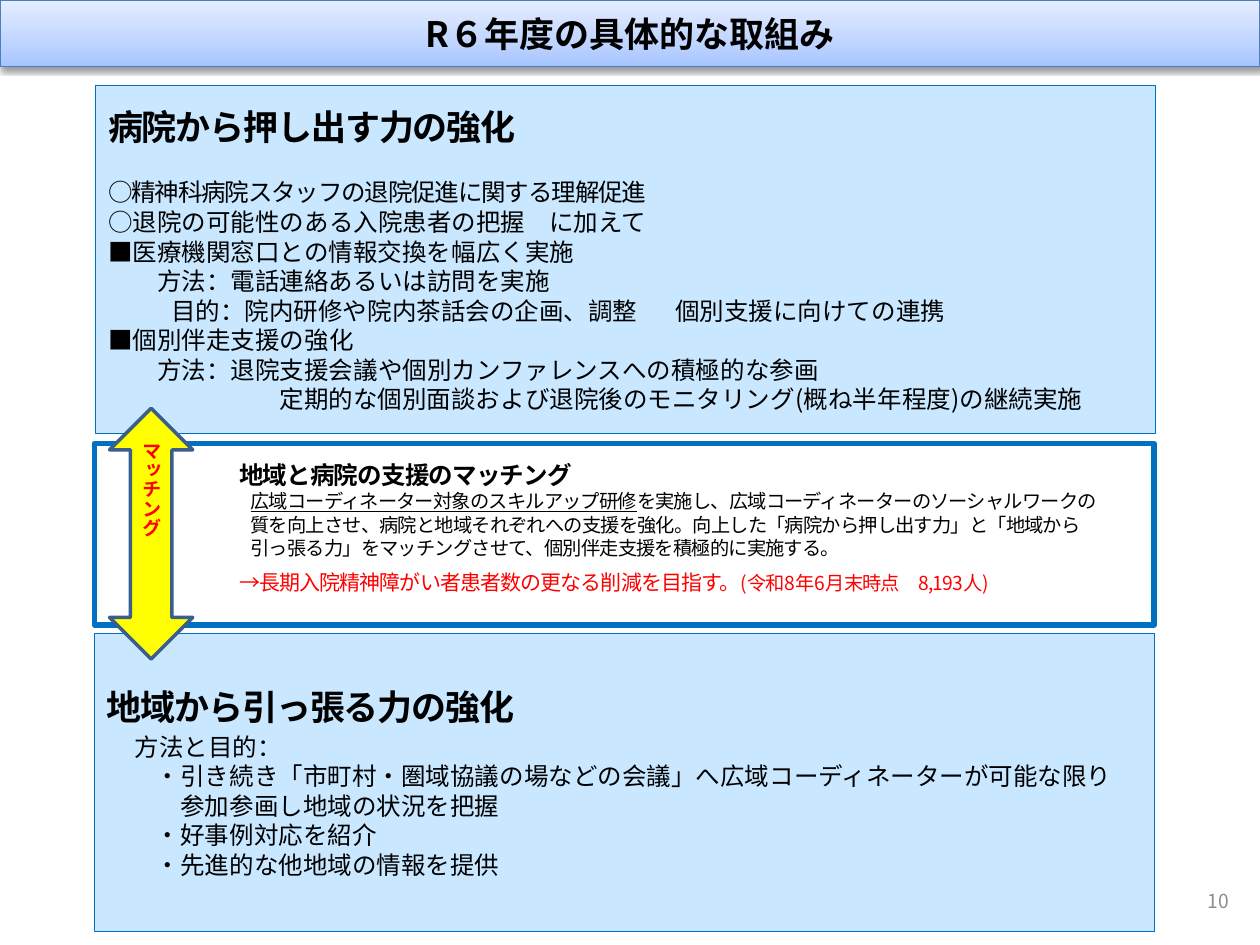
from dataclasses import dataclass

from lxml.etree import SubElement
from pptx import Presentation
from pptx.dml.color import RGBColor
from pptx.enum.shapes import MSO_SHAPE
from pptx.enum.text import MSO_ANCHOR, PP_ALIGN
from pptx.oxml import parse_xml
from pptx.oxml.ns import nsdecls, qn
from pptx.util import Inches, Pt


@dataclass(frozen=True)
class Theme:
    font: str = "Noto Sans CJK JP"
    black: str = "000000"
    red: str = "FF0000"
    grey: str = "8C8C8C"
    blue: str = "0070C0"
    panel: str = "C9E8FF"
    yellow: str = "FFFF00"
    arrow_line: str = "3A5F8C"
    banner_line: str = "4B7EBC"
    banner_stops: tuple = ((0, "A4C4FF"), (35, "BFD4FF"), (100, "E6EEFF"))
    heading: int = 20
    body: int = 14
    note: int = 12
    small: int = 11


THEME = Theme()
EM = THEME.body / 72  # one body character, in inches
LINE_HEIGHT = 1.21


@dataclass(frozen=True)
class Box:
    left: float
    top: float
    width: float
    height: float

    def inches(self):
        return [Inches(v) for v in (self.left, self.top, self.width, self.height)]


def add_box(slide, box, fill=None, line=None, width=0.5, preset=MSO_SHAPE.RECTANGLE):
    shape = slide.shapes.add_shape(preset, *box.inches())
    shape.shadow.inherit = False
    if fill:
        shape.fill.solid()
        shape.fill.fore_color.rgb = RGBColor.from_string(fill)
    else:
        shape.fill.background()
    shape.line.color.rgb = RGBColor.from_string(line)
    shape.line.width = Pt(width)
    return shape


def prepare_text(shape, anchor=MSO_ANCHOR.MIDDLE):
    text_frame = shape.text_frame
    text_frame.word_wrap = True
    text_frame.vertical_anchor = anchor
    return text_frame


def format_run(run, size, color=THEME.black, bold=False, underline=False, spacing=0):
    run.font.name = THEME.font
    run.font.size = Pt(size)
    run.font.bold = bold
    run.font.underline = underline
    run.font.color.rgb = RGBColor.from_string(color)
    properties = run._r.get_or_add_rPr()
    if spacing:
        properties.set("spc", str(round(spacing * 100)))
    SubElement(properties, qn("a:ea")).set("typeface", THEME.font)


def add_line(text_frame, text, size=THEME.body, indent=0, hanging=0, tabs=(),
             before=0, align=PP_ALIGN.LEFT, **style):
    """Write one paragraph; indents and tab stops are in inches."""
    paragraph = text_frame.paragraphs[0]
    if paragraph.runs:
        paragraph = text_frame.add_paragraph()
    paragraph.text = text
    paragraph.alignment = align
    paragraph.line_spacing = Pt(round(size * LINE_HEIGHT, 1))
    paragraph.space_before = Pt(before)
    properties = paragraph._p.get_or_add_pPr()
    properties.set("marL", str(Inches(indent)))
    properties.set("indent", str(Inches(-hanging)))
    if tabs:
        stops = SubElement(properties, qn("a:tabLst"))
        for position in tabs:
            stop = SubElement(stops, qn("a:tab"))
            stop.set("pos", str(Inches(position)))
            stop.set("algn", "l")
    for run in paragraph.runs:
        format_run(run, size, **style)
    return paragraph


def add_banner(slide, box):
    shape = add_box(slide, box, THEME.panel, THEME.banner_line, 0.75)
    # Three-stop gradient and soft shadow
    stops = "".join(f'<a:gs pos="{position * 1000}"><a:srgbClr val="{color}"/></a:gs>'
                    for position, color in THEME.banner_stops)
    properties = shape._element.spPr
    properties.replace(properties.find(qn("a:solidFill")), parse_xml(
        f'<a:gradFill {nsdecls("a")} rotWithShape="1"><a:gsLst>{stops}</a:gsLst>'
        '<a:lin ang="16200000" scaled="0"/></a:gradFill>'))
    properties.replace(properties.find(qn("a:effectLst")), parse_xml(
        f'<a:effectLst {nsdecls("a")}><a:outerShdw blurRad="{Pt(3.1)}" '
        f'dist="{Pt(1.6)}" dir="5400000" rotWithShape="0"><a:srgbClr val="000000">'
        '<a:alpha val="38000"/></a:srgbClr></a:outerShdw></a:effectLst>'))
    add_line(prepare_text(shape), "R６年度の具体的な取組み", THEME.heading,
             align=PP_ALIGN.CENTER, bold=True)


def add_panel(slide, box, heading, lines):
    text_frame = prepare_text(add_box(slide, box, THEME.panel, THEME.blue))
    add_line(text_frame, heading, THEME.heading, bold=True, spacing=-0.7)
    for text, options in lines:
        add_line(text_frame, text, **options)


def add_matching(slide, box):
    # Text beside the arrow
    text_box = Box(box.left + 1.05, box.top + 0.08, 7.09, 1.28)
    text_frame = prepare_text(slide.shapes.add_textbox(*text_box.inches()), MSO_ANCHOR.TOP)
    add_line(text_frame, "地域と病院の支援のマッチング", bold=True, spacing=-0.5)
    paragraph = add_line(text_frame, "広域コーディネーター対象のスキルアップ研修", THEME.small,
                         indent=0.09, underline=True, spacing=-0.5)
    run = paragraph.add_run()
    run.text = ("を実施し、広域コーディネーターのソーシャルワークの質を向上させ、"
                "病院と地域それぞれへの支援を強化。向上した「病院から押し出す力」と"
                "「地域から引っ張る力」をマッチングさせて、個別伴走支援を積極的に実施する。")
    format_run(run, THEME.small, spacing=-0.5)
    paragraph = add_line(text_frame, "→長期入院精神障がい者患者数の更なる削減を目指す。",
                         THEME.note, before=6, color=THEME.red, spacing=-0.5)
    run = paragraph.add_run()
    run.text = "(令和8年6月末時点　8,193人)"
    format_run(run, THEME.small, THEME.red, spacing=-0.5)

    # Frame
    add_box(slide, box, line=THEME.blue, width=3)

    # Arrow linking the two panels
    arrow = add_box(slide, Box(box.left + 0.12, box.top - 0.28, 0.66, 1.99),
                    THEME.yellow, THEME.arrow_line, 2, MSO_SHAPE.UP_DOWN_ARROW)
    text_frame = prepare_text(arrow)
    text_frame._txBody.bodyPr.set("vert", "eaVert")
    add_line(text_frame, "マッチング", THEME.small, color=THEME.red, bold=True)


def add_page_number(slide, box):
    text_frame = prepare_text(slide.shapes.add_textbox(*box.inches()))
    add_line(text_frame, "10", THEME.small, align=PP_ALIGN.RIGHT, color=THEME.grey)


def main():
    presentation = Presentation()
    presentation.slide_width, presentation.slide_height = Inches(10), Inches(7.5)
    slide = presentation.slides.add_slide(presentation.slide_layouts[6])
    detail = {"indent": 2 * EM}
    bullet = {"indent": 3 * EM, "hanging": EM}

    add_banner(slide, Box(0, 0, 10, 0.53))
    add_panel(slide, Box(0.76, 0.68, 8.41, 2.76), "病院から押し出す力の強化", [
        ("○精神科病院スタッフの退院促進に関する理解促進", {"before": 17, "spacing": -0.7}),
        ("○退院の可能性のある入院患者の把握\tに加えて", {"tabs": [24 * EM]}),
        ("■医療機関窓口との情報交換を幅広く実施", {}),
        ("方法：電話連絡あるいは訪問を実施", detail),
        ("\t目的：院内研修や院内茶話会の企画、調整\t個別支援に向けての連携",
         {"tabs": [2 * EM, 23 * EM]}),
        ("■個別伴走支援の強化", {}),
        ("方法：退院支援会議や個別カンファレンスへの積極的な参画", detail),
        ("定期的な個別面談および退院後のモニタリング(概ね半年程度)の継続実施",
         {"indent": 7 * EM}),
    ])
    add_panel(slide, Box(0.75, 5.03, 8.41, 2.36), "地域から引っ張る力の強化", [
        ("方法と目的：", {"indent": 0.22, "before": 2}),
        ("・引き続き「市町村・圏域協議の場などの会議」へ広域コーディネーターが可能な限り\v"
         "参加参画し地域の状況を把握", bullet),
        ("・好事例対応を紹介", bullet),
        ("・先進的な他地域の情報を提供", bullet),
    ])
    add_matching(slide, Box(0.75, 3.52, 8.41, 1.44))
    add_page_number(slide, Box(7.6, 6.95, 2.25, 0.4))
    presentation.save("out.pptx")


if __name__ == "__main__":
    main()
